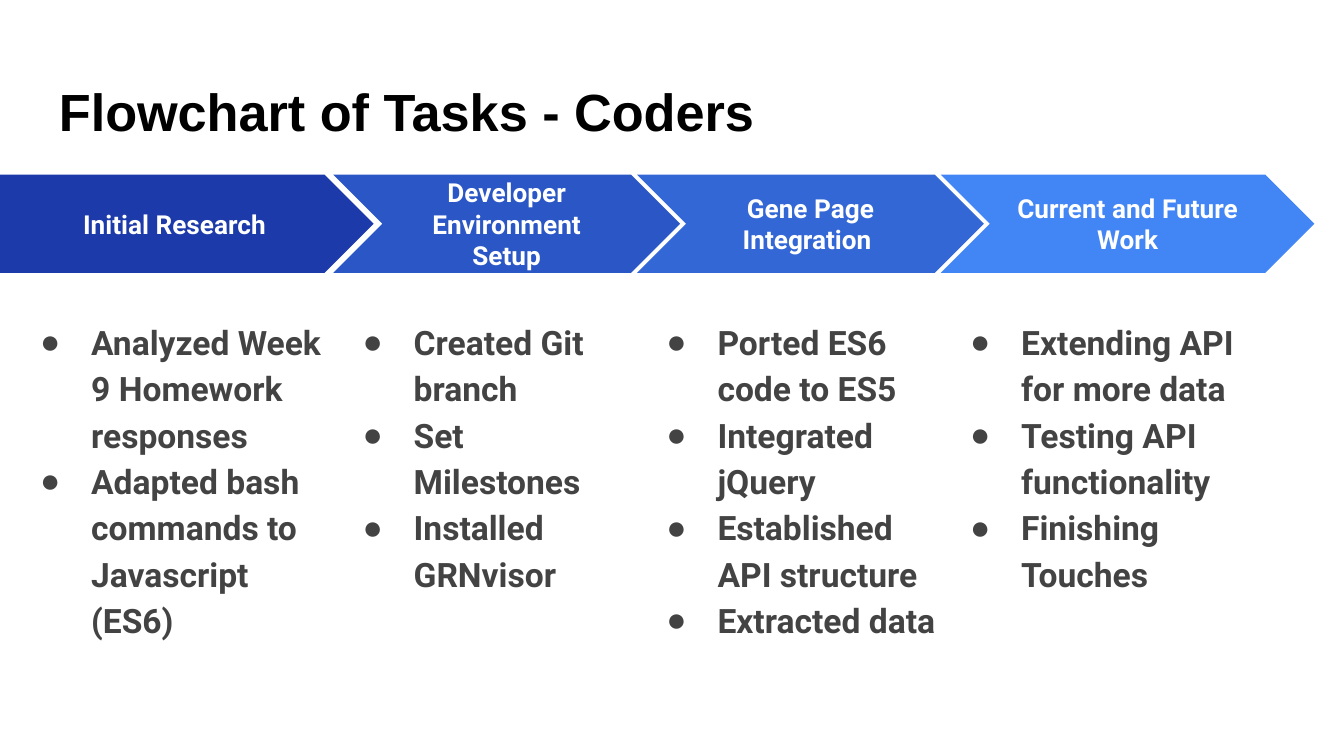
from dataclasses import dataclass

from lxml.etree import SubElement
from pptx import Presentation
from pptx.dml.color import RGBColor as RGB
from pptx.enum.shapes import MSO_SHAPE as Shape
from pptx.enum.text import MSO_ANCHOR as Anchor, PP_ALIGN as Align
from pptx.oxml.ns import qn
from pptx.util import Inches, Pt


@dataclass(frozen=True)
class Theme:
    title_color: str = "000000"
    stage_color: str = "FFFFFF"
    task_color: str = "434343"
    title_size: int = 28
    stage_size: int = 14
    task_size: int = 18
    title_font: str = "Arial"
    body_font: str = "Roboto"
    bullet_font: str = "Arial"
    stage_fills: tuple = ("1C3AA9", "2A56C6", "3367D6", "4285F4")


theme = Theme()


def write_text(holder, lines, *, size, font, color, align=Align.LEFT,
               anchor=Anchor.TOP, margin=0, indent=0, spacing=None, bullet=None):
    frame = holder.text_frame
    frame.word_wrap = True
    frame.vertical_anchor = anchor
    frame.margin_left = frame.margin_right = Inches(0.1)
    frame.margin_top = frame.margin_bottom = Inches(0.1)
    frame.text = "\n".join(lines)
    for paragraph in frame.paragraphs:
        paragraph.alignment = align
        if spacing:
            paragraph.line_spacing = spacing
        for run in paragraph.runs:
            run.font.size = Pt(size)
            run.font.name = font
            run.font.bold = True
            run.font.color.rgb = RGB.from_string(color)
        layout = paragraph._p.get_or_add_pPr()
        layout.set("marL", str(Inches(margin)))
        layout.set("indent", str(Inches(indent)))
        if bullet:
            tint = SubElement(layout, qn("a:buClr"))
            SubElement(tint, qn("a:srgbClr"), val=color)
            SubElement(layout, qn("a:buFont"), typeface=theme.bullet_font)
            SubElement(layout, qn("a:buChar"), char=bullet)


deck = Presentation()
deck.slide_width = Inches(10)
deck.slide_height = Inches(10) * 9 // 16
slide = deck.slides.add_slide(deck.slide_layouts[6])

title = slide.shapes.add_textbox(Inches(0.34), Inches(0.49), Inches(9.32), Inches(0.63))
write_text(title, ["Flowchart of Tasks - Coders"], size=theme.title_size,
           font=theme.title_font, color=theme.title_color)

stages = [
    ("Initial Research", Shape.PENTAGON, 0, 2.78, 0.08, 2.45,
     ["Analyzed Week 9 Homework responses",
      "Adapted bash commands to Javascript (ES6)"]),
    ("Developer Environment Setup", Shape.CHEVRON, 2.48, 2.58, 2.48, 2.36,
     ["Created Git branch", "Set Milestones", "Installed GRNvisor"]),
    ("Gene Page Integration ", Shape.CHEVRON, 4.74, 2.58, 4.74, 2.39,
     ["Ported ES6 code to ES5", "Integrated jQuery",
      "Established API structure", "Extracted data"]),
    ("Current and Future Work", Shape.CHEVRON, 7, 2.78, 7, 2.43,
     ["Extending API for more data", "Testing API functionality",
      "Finishing Touches"]),
]

for stage, fill in zip(stages, theme.stage_fills):
    heading, outline, arrow_left, arrow_width, tasks_left, tasks_width, tasks = stage
    column = slide.shapes.add_group_shape()

    arrow = column.shapes.add_shape(outline, Inches(arrow_left), Inches(1.3),
                                    Inches(arrow_width), Inches(0.73))
    arrow.adjustments[0] = 0.5
    arrow.shadow.inherit = False
    arrow.fill.solid()
    arrow.fill.fore_color.rgb = RGB.from_string(fill)
    arrow.line.fill.background()
    write_text(arrow, [heading], size=theme.stage_size, font=theme.body_font,
               color=theme.stage_color, align=Align.CENTER, anchor=Anchor.MIDDLE,
               indent=-0.08)

    task_list = column.shapes.add_textbox(Inches(tasks_left), Inches(2.25),
                                          Inches(tasks_width), Inches(2.86))
    write_text(task_list, tasks, size=theme.task_size, font=theme.body_font,
               color=theme.task_color, margin=0.5, indent=-0.38, spacing=1.15,
               bullet="●")

deck.save("out.pptx")
